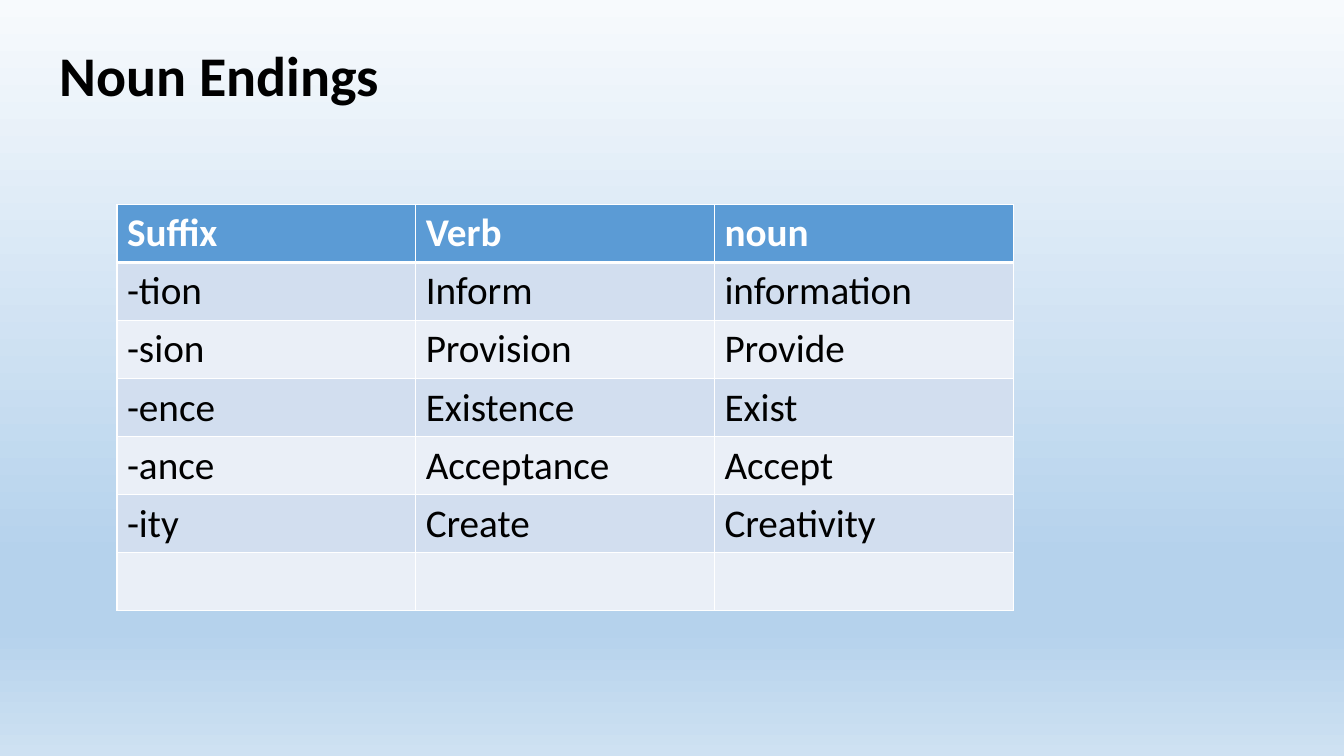
from lxml import etree
from pptx import Presentation
from pptx.dml.color import RGBColor
from pptx.enum.text import MSO_ANCHOR, PP_ALIGN
from pptx.oxml import parse_xml
from pptx.oxml.ns import qn
from pptx.util import Inches, Pt

COLORS = {
    "text": "000000", "white": "FFFFFF", "header": "5B9BD5",
    "band_dark": "D2DEEF", "band_light": "EAEFF7",
    "sky_top": "F7FAFD", "sky_mid": "B5D2EC", "sky_end": "CEE1F2",
}
SKY = [(0, "sky_top"), (74, "sky_mid"), (83, "sky_mid"), (100, "sky_end")]
ROWS = [
    ("Suffix", "Verb", "noun"),
    ("-tion", "Inform", "information"),
    ("-sion", "Provision", "Provide"),
    ("-ence", "Existence", "Exist"),
    ("-ance", "Acceptance", "Accept"),
    ("-ity", "Create", "Creativity"),
    ("", "", ""),
]
A_NS = "http://schemas.openxmlformats.org/drawingml/2006/main"


def style(p, size, color, bold):
    p.font.name = "Calibri"
    p.font.size = Pt(size)
    p.font.bold = bold
    p.font.color.rgb = RGBColor.from_string(COLORS[color])


def add_border(cell, side, width):
    ln = etree.SubElement(cell._tc.get_or_add_tcPr(), qn(f"a:ln{side}"), w=str(Pt(width)))
    fill = etree.SubElement(ln, qn("a:solidFill"))
    etree.SubElement(fill, qn("a:srgbClr"), val=COLORS["white"])


prs = Presentation()
prs.slide_width = Inches(13.33)
prs.slide_height = Inches(7.5)
s = prs.slides.add_slide(prs.slide_layouts[5])

fill = s.background.fill
fill.gradient()
fill.gradient_angle = 270
stops = "".join(
    f'<a:gs pos="{pos * 1000}"><a:srgbClr val="{COLORS[name]}"/></a:gs>' for pos, name in SKY
)
gs_lst = s.background._cSld.find(".//" + qn("a:gsLst"))
gs_lst.getparent().replace(gs_lst, parse_xml(f'<a:gsLst xmlns:a="{A_NS}">{stops}</a:gsLst>'))

title = s.shapes.title
title.left, title.top = Inches(0.47), Inches(0.35)
title.width, title.height = Inches(3.41), Inches(0.77)
tf = title.text_frame
tf.text = "Noun Endings"
tf.word_wrap = False
tf.vertical_anchor = MSO_ANCHOR.TOP
p = tf.paragraphs[0]
p.alignment = PP_ALIGN.CENTER
style(p, 40, "text", True)

table = s.shapes.add_table(
    len(ROWS), 3, Inches(1.16), Inches(2.03), Inches(8.89), Inches(3.97)
).table
for r, words in enumerate(ROWS):
    band = "header" if r == 0 else "band_dark" if r % 2 else "band_light"
    for c, word in enumerate(words):
        cell = table.cell(r, c)
        for side in "LRTB":
            heavy = (r, side) in [(0, "B"), (1, "T")]
            add_border(cell, side, 3 if heavy else 1)
        cell.fill.solid()
        cell.fill.fore_color.rgb = RGBColor.from_string(COLORS[band])
        p = cell.text_frame.paragraphs[0]
        if word:
            p.text = word
        style(p, 28, "white" if r == 0 else "text", r == 0)

prs.save("out.pptx")
